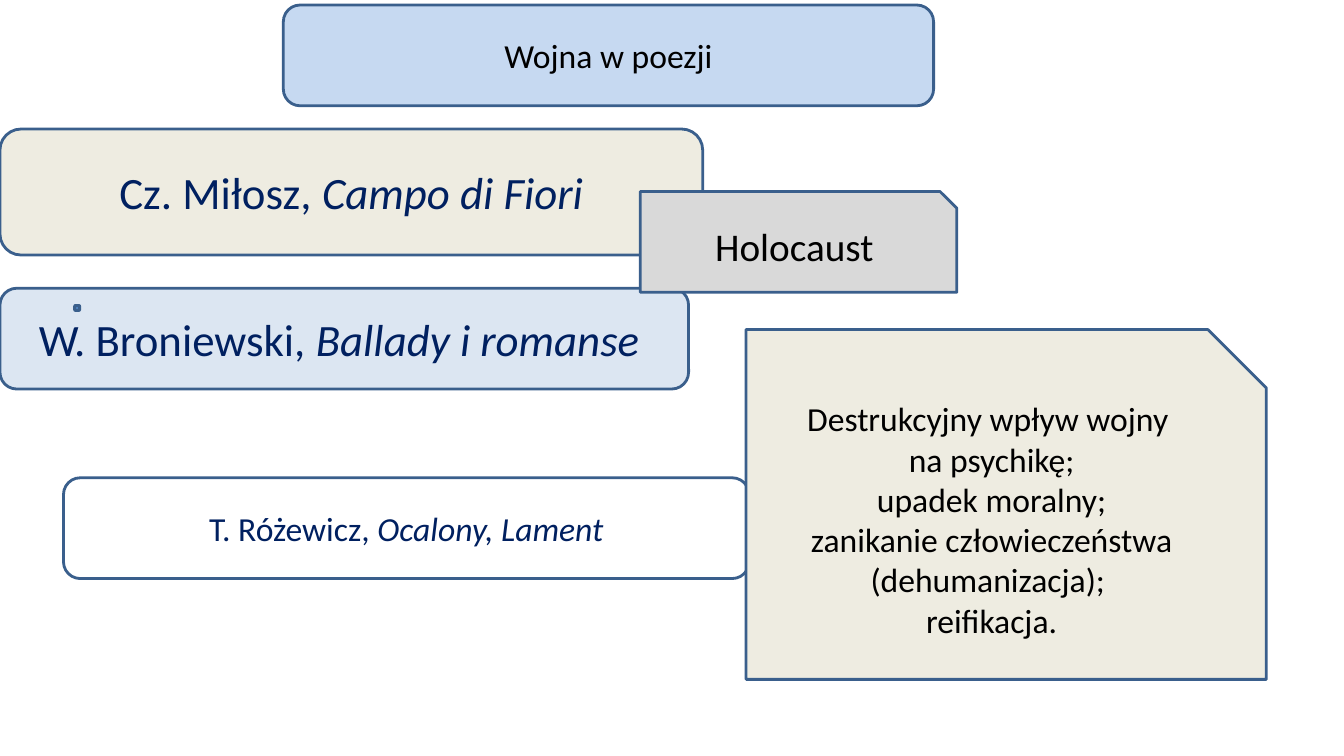
import dataclasses

import pptx
import pptx.dml.color
import pptx.enum.shapes
import pptx.enum.text
import pptx.util

Inches = pptx.util.Inches
ROUND = pptx.enum.shapes.MSO_SHAPE.ROUNDED_RECTANGLE
SNIP = pptx.enum.shapes.MSO_SHAPE.SNIP_1_RECTANGLE
NAVY = "002060"
BLACK = "000000"
CREAM = "EEECE1"
OUTLINE = "3A5F8C"


@dataclasses.dataclass
class Run:
    text: str
    italic: bool = False


@dataclasses.dataclass
class Box:
    kind: pptx.enum.shapes.MSO_SHAPE
    left: float
    top: float
    width: float
    height: float
    fill: str
    size: int = 24
    color: str = BLACK
    paragraphs: list[list[Run]] = dataclasses.field(default_factory=list)


def rgb(value: str) -> pptx.dml.color.RGBColor:
    return pptx.dml.color.RGBColor.from_string(value)


def work(author: str, title: str) -> list[list[Run]]:
    return [[Run(author), Run(title, italic=True)]]


def plain(*lines: str) -> list[list[Run]]:
    return [[Run(line)] for line in lines]


def draw_box(s: pptx.slide.Slide, box: Box) -> None:
    sp = s.shapes.add_shape(box.kind, Inches(box.left), Inches(box.top),
                            Inches(box.width), Inches(box.height))
    sp.shadow.inherit = False
    sp.fill.solid()
    sp.fill.fore_color.rgb = rgb(box.fill)
    sp.line.color.rgb = rgb(OUTLINE)
    sp.line.width = pptx.util.Pt(2)
    tf = sp.text_frame
    tf.word_wrap = True
    tf.vertical_anchor = pptx.enum.text.MSO_ANCHOR.MIDDLE
    for i, runs in enumerate(box.paragraphs):
        p = tf.add_paragraph() if i else tf.paragraphs[0]
        p.alignment = pptx.enum.text.PP_ALIGN.CENTER
        for run in runs:
            r = p.add_run()
            r.text = run.text
            r.font.name = "Calibri"
            r.font.size = pptx.util.Pt(box.size)
            r.font.italic = run.italic
            r.font.color.rgb = rgb(box.color)


BOXES = [
    Box(ROUND, 0, 1.28, 6.97, 1.25, CREAM, 32, NAVY,
        work("Cz. Miłosz, ", "Campo di Fiori")),
    Box(ROUND, 0, 2.86, 6.83, 1, "DCE6F2", 32, NAVY,
        work("W. Broniewski, ", "Ballady i romanse ")),
    Box(ROUND, 0.74, 3.03, 0.05, 0.05, "4F81BD"),
    Box(SNIP, 6.35, 1.9, 3.14, 1, "D9D9D9", 28, BLACK, plain("Holocaust")),
    Box(ROUND, 2.81, 0.05, 6.45, 1, "C6D9F1", 24, BLACK,
        plain("Wojna w poezji")),
    Box(ROUND, 0.63, 4.74, 6.8, 1, "FFFFFF", 24, NAVY,
        work("T. Różewicz, ", "Ocalony, Lament")),
    Box(SNIP, 7.4, 3.27, 5.16, 3.47, CREAM, 24, BLACK,
        plain("Destrukcyjny wpływ wojny ", "na psychikę;", "upadek moralny;",
              "zanikanie człowieczeństwa (dehumanizacja); ", "reifikacja.")),
]


def main() -> None:
    prs = pptx.Presentation()
    prs.slide_width = Inches(13.33)
    prs.slide_height = Inches(7.5)
    s = prs.slides.add_slide(prs.slide_layouts[6])
    for box in BOXES:
        draw_box(s, box)
    prs.save("out.pptx")


if __name__ == "__main__":
    main()
